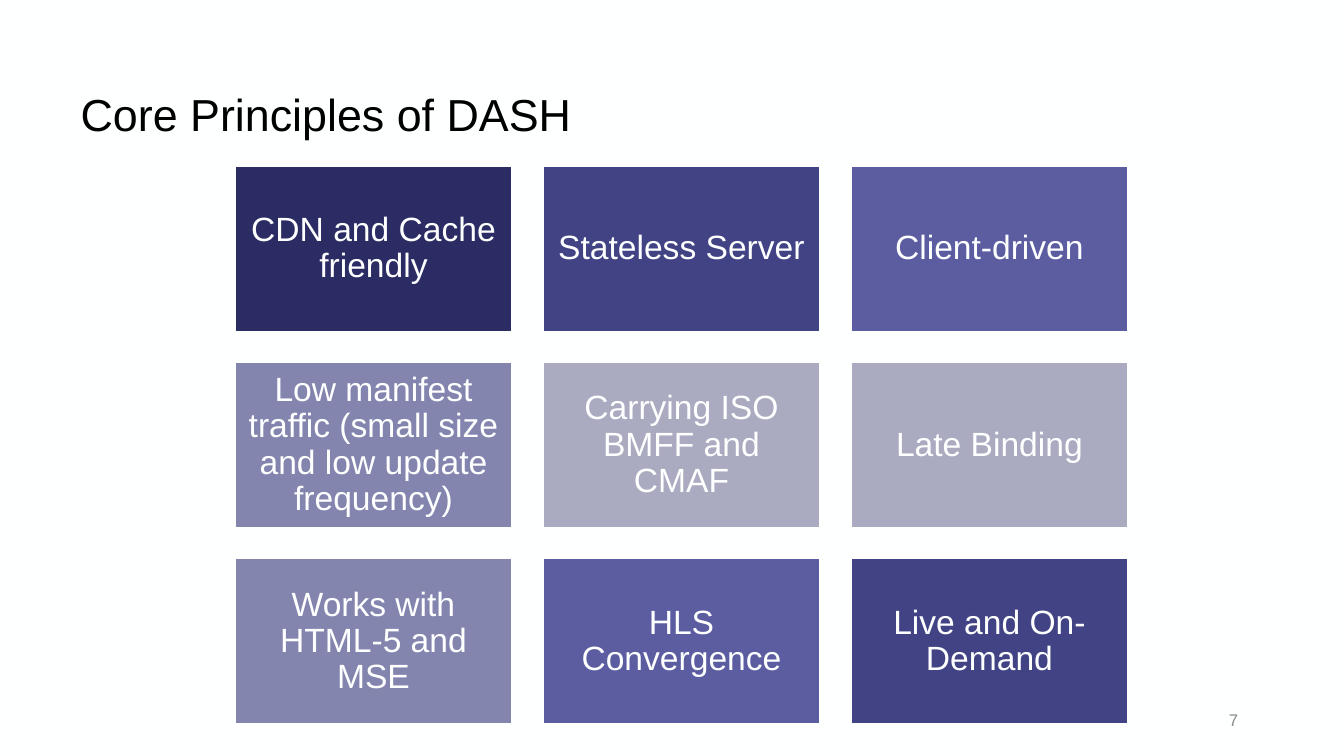
from dataclasses import dataclass

from pptx import Presentation
from pptx.dml.color import RGBColor
from pptx.enum.shapes import MSO_SHAPE
from pptx.enum.text import MSO_ANCHOR, MSO_AUTO_SIZE, PP_ALIGN
from pptx.util import Cm, Pt


@dataclass(frozen=True)
class Theme:
    font: str = "Arial"
    paper: str = "FEFFFF"
    ink: str = "000000"
    muted: str = "8C8C8C"
    midnight: str = "2C2C64"
    indigo: str = "424384"
    violet: str = "5C5DA1"
    lavender: str = "8485AF"
    mist: str = "AAAAC0"
    title_size: int = 24
    tile_size: int = 18
    number_size: int = 9
    border: int = 2


class SlideBuilder:
    def __init__(self, slide, theme):
        self.slide = slide
        self.theme = theme
        background = slide.background.fill
        background.solid()
        background.fore_color.rgb = RGBColor.from_string(theme.paper)

    def set_text(self, frame, text, size, color, align, anchor, spacing=1.0):
        frame.text = text
        frame.word_wrap = True
        frame.auto_size = MSO_AUTO_SIZE.NONE
        frame.vertical_anchor = anchor
        for paragraph in frame.paragraphs:
            paragraph.alignment = align
            paragraph.line_spacing = spacing
            for run in paragraph.runs:
                run.font.name = self.theme.font
                run.font.size = Pt(size)
                run.font.color.rgb = RGBColor.from_string(color)

    def title(self, text, left, top, width, height):
        heading = self.slide.shapes.title
        heading.left, heading.top = Cm(left), Cm(top)
        heading.width, heading.height = Cm(width), Cm(height)
        self.set_text(heading.text_frame, text, self.theme.title_size,
                      self.theme.ink, PP_ALIGN.LEFT, MSO_ANCHOR.BOTTOM, 0.9)

    def tile(self, text, fill, left, top, width, height):
        tile = self.slide.shapes.add_shape(
            MSO_SHAPE.RECTANGLE, Cm(left), Cm(top), Cm(width), Cm(height))
        tile.shadow.inherit = False
        tile.fill.solid()
        tile.fill.fore_color.rgb = RGBColor.from_string(fill)
        tile.line.color.rgb = RGBColor.from_string(self.theme.paper)
        tile.line.width = Pt(self.theme.border)
        frame = tile.text_frame
        frame.margin_left = frame.margin_right = Cm(0.18)
        frame.margin_top = frame.margin_bottom = Cm(0.18)
        self.set_text(frame, text, self.theme.tile_size, self.theme.paper,
                      PP_ALIGN.CENTER, MSO_ANCHOR.MIDDLE, 0.9)

    def page_number(self, text, left, top, width, height):
        number = self.slide.shapes.add_textbox(
            Cm(left), Cm(top), Cm(width), Cm(height))
        self.set_text(number.text_frame, text, self.theme.number_size,
                      self.theme.muted, PP_ALIGN.RIGHT, MSO_ANCHOR.MIDDLE)


def main():
    theme = Theme()
    deck = Presentation()
    deck.slide_width, deck.slide_height = Cm(25.4), Cm(14.29)
    builder = SlideBuilder(deck.slides.add_slide(deck.slide_layouts[5]), theme)
    builder.title("Core Principles of DASH", 1.27, 0.51, 22.86, 2.29)

    principles = [
        ("CDN and Cache friendly", theme.midnight),
        ("Stateless Server", theme.indigo),
        ("Client-driven", theme.violet),
        ("Low manifest traffic (small size and low update frequency)",
         theme.lavender),
        ("Carrying ISO BMFF and CMAF", theme.mist),
        ("Late Binding", theme.mist),
        ("Works with HTML-5 and MSE", theme.lavender),
        ("HLS Convergence", theme.violet),
        ("Live and On-Demand", theme.indigo),
    ]
    columns = 3
    grid_left, grid_top = 4.42, 3.12
    tile_width, tile_height, gap = 5.28, 3.17, 0.54
    for index, (principle, fill) in enumerate(principles):
        row, column = divmod(index, columns)
        builder.tile(principle, fill,
                     grid_left + column * (tile_width + gap),
                     grid_top + row * (tile_height + gap),
                     tile_width, tile_height)

    builder.page_number("7", 17.93, 13.23, 5.72, 0.76)
    deck.save("out.pptx")


if __name__ == "__main__":
    main()
